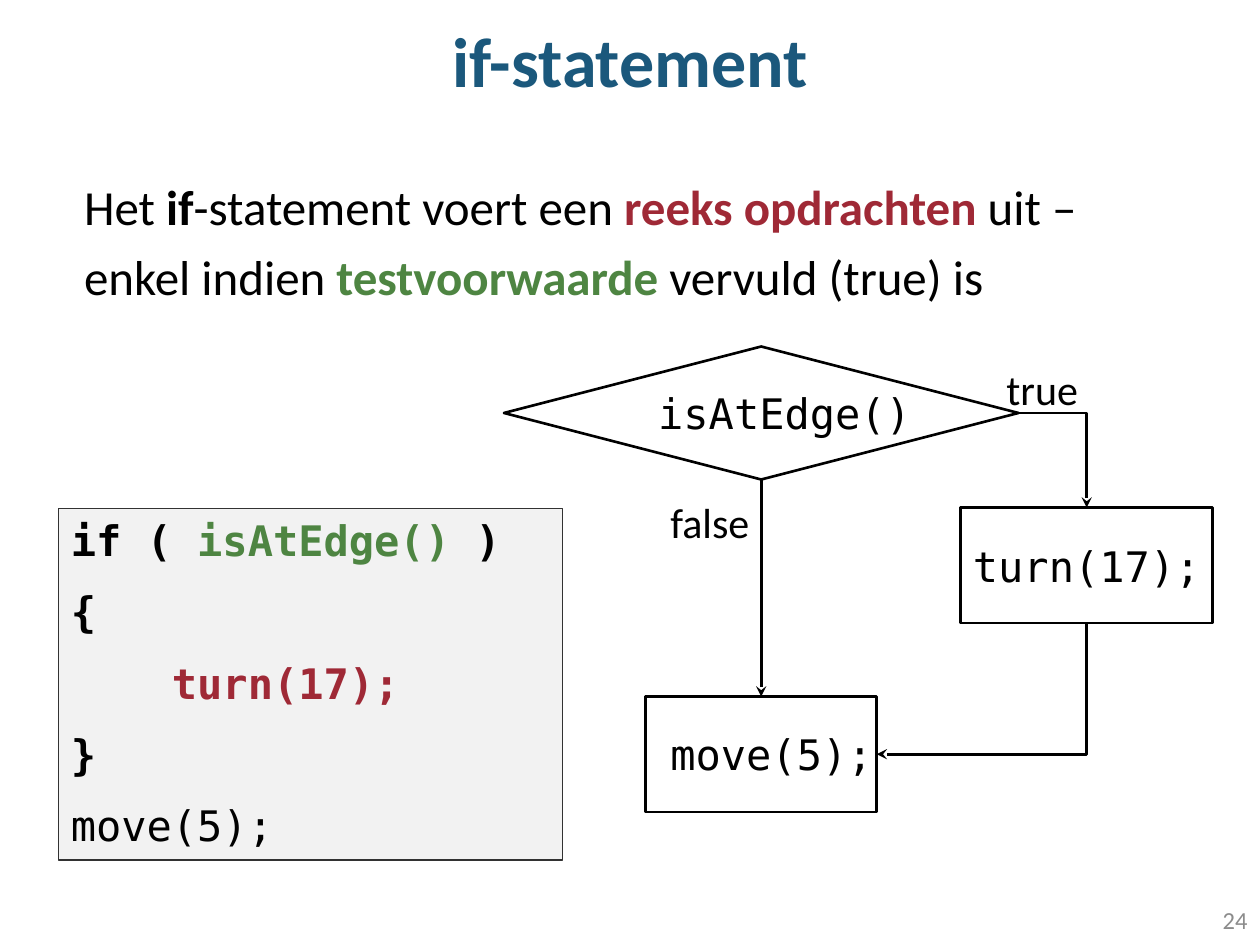
from pptx import Presentation
from pptx.dml.color import RGBColor as RGB
from pptx.enum.shapes import MSO_CONNECTOR as Link, MSO_SHAPE as Kind
from pptx.enum.text import MSO_ANCHOR as Anchor, PP_ALIGN as Align
from pptx.oxml.ns import qn
from pptx.util import Pt
from lxml.etree import SubElement

BLACK = RGB(0x00, 0x00, 0x00)
WHITE = RGB(0xFF, 0xFF, 0xFF)
BLUE = RGB(0x1B, 0x58, 0x7C)
RED = RGB(0x9F, 0x29, 0x36)
GREEN = RGB(0x4E, 0x85, 0x42)
GRAY = RGB(0x8C, 0x8C, 0x8C)
PALE = RGB(0xF2, 0xF2, 0xF2)
DARK = RGB(0x32, 0x32, 0x32)
SANS = "Calibri"
MONO = "DejaVu Sans Mono"


def style(para, face, size, color=BLACK, bold=False, align=Align.LEFT):
    font = para.font
    font.name, font.size, font.bold = face, Pt(size), bold
    font.color.rgb = color
    para.alignment = align


def add_runs(para, parts):
    """Each part is (text, color); a colour of None keeps plain text."""
    for text, color in parts:
        run = para.add_run()
        run.text = text
        if color is not None:
            run.font.bold = True
            run.font.color.rgb = color


def add_text(slide, box, text, face, size, color=BLACK, bold=False,
             align=Align.LEFT, anchor=Anchor.TOP):
    frame = slide.shapes.add_textbox(*map(Pt, box)).text_frame
    frame.word_wrap = True
    frame.vertical_anchor = anchor
    para = frame.paragraphs[0]
    para.text = text
    style(para, face, size, color, bold, align)
    return para


def add_node(slide, kind, box, fill=WHITE, line=BLACK, width=1.5):
    node = slide.shapes.add_shape(kind, *map(Pt, box))
    node.shadow.inherit = False
    node.fill.solid()
    node.fill.fore_color.rgb = fill
    node.line.color.rgb = line
    node.line.width = Pt(width)
    return node


def add_arrow(slide, kind, start, end):
    arrow = slide.shapes.add_connector(kind, *map(Pt, start + end))
    arrow.line.color.rgb = BLACK
    arrow.line.width = Pt(1.5)
    props = arrow._element.spPr
    SubElement(props.find(qn("a:ln")), qn("a:tailEnd"), type="stealth")
    SubElement(props, qn("a:effectLst"))
    return arrow


def add_bend(slide, start, end, down=False):
    """Arrow with one corner: across then down, or down then to the left."""
    (x1, y1), (x2, y2) = start, end
    if down:
        # A quarter turn swaps width and height about the shared centre
        mid_x, mid_y = (x1 + x2) / 2, (y1 + y2) / 2
        half_w, half_h = (y2 - y1) / 2, (x1 - x2) / 2
        start = (mid_x - half_w, mid_y - half_h)
        end = (mid_x + half_w, mid_y + half_h)
    props = add_arrow(slide, Link.ELBOW, start, end)._element.spPr
    props.find(qn("a:prstGeom")).set("prst", "bentConnector2")
    if down:
        props.find(qn("a:xfrm")).set("rot", str(90 * 60000))


def add_title(slide, box):
    para = add_text(slide, box, "if-statement", SANS, 40, BLUE, True,
                    Align.CENTER, Anchor.MIDDLE)
    para.line_spacing = 0.9


def add_intro(slide, box):
    para = add_text(slide, box, "", SANS, 28)
    para.line_spacing = Pt(40)
    para.space_before = Pt(7.5)
    para._p.get_or_add_pPr().set("marL", str(Pt(8.6)))
    add_runs(para, [("Het ", None), ("if", BLACK),
                    ("-statement voert een ", None),
                    ("reeks opdrachten ", RED),
                    ("uit – enkel indien ", None),
                    ("testvoorwaarde", GREEN),
                    (" vervuld (true) is", None)])


def add_code(slide, box):
    frame = add_node(slide, Kind.RECTANGLE, box, PALE, DARK, 0.75).text_frame
    frame.word_wrap = True
    frame.vertical_anchor = Anchor.TOP
    # Lines of code: indent in points, then the coloured parts
    lines = [(0, [("if ( ", BLACK), ("isAtEdge() ", GREEN), (")", BLACK)]),
             (0, [("{", BLACK)]),
             (57.8, [("turn(17);", RED)]),
             (0, [("}", BLACK)]),
             (0, [("move(5);", None)])]
    for i, (indent, parts) in enumerate(lines):
        para = frame.add_paragraph() if i else frame.paragraphs[0]
        style(para, MONO, 24)
        para.space_before = Pt(12)
        para._p.get_or_add_pPr().set("marL", str(Pt(indent)))
        add_runs(para, parts)


def add_flow(slide, box):
    left, top, width, height = box
    mid, right = left + 147, left + 333
    test_y, turn_y, move_y = top + 38, top + 92, top + 200
    node_h = 66

    # Nodes
    test = add_node(slide, Kind.FLOWCHART_DECISION, (left, top, 294, 76))
    move = add_node(slide, Kind.RECTANGLE, (mid - 66, move_y, 132, node_h))
    turn = add_node(slide, Kind.RECTANGLE, (right - 72, turn_y, 144, node_h))
    frame = turn.text_frame
    frame.word_wrap = False
    frame.vertical_anchor = Anchor.MIDDLE
    frame.paragraphs[0].text = "turn(17);"
    style(frame.paragraphs[0], MONO, 24, align=Align.CENTER)

    # Labels
    for x, y, wide, text, face in [(81, 20, 192, "isAtEdge()", MONO),
                                   (88, 215, 132, "move(5);", MONO),
                                   (280, 6, 66, "true", SANS),
                                   (88, 82, 66, "false", SANS)]:
        add_text(slide, (left + x, top + y, wide, 36), text, face, 24)

    # Arrows
    add_bend(slide, (left + 294, test_y), (right, turn_y))
    add_bend(slide, (right, turn_y + node_h),
             (mid + 66, move_y + node_h / 2), down=True)
    fall = add_arrow(slide, Link.STRAIGHT, (mid, top + 76), (mid, move_y))
    fall.begin_connect(test, 2)
    fall.end_connect(move, 0)


def main():
    deck = Presentation()
    deck.slide_width, deck.slide_height = Pt(720), Pt(540)
    slide = deck.slides.add_slide(deck.slide_layouts[6])
    add_title(slide, (0, 0, 720, 74))
    add_intro(slide, (32.4, 90.7, 600, 378))
    add_code(slide, (33.4, 290.4, 288, 201))
    add_flow(slide, (288, 198, 405, 266))
    # Page number
    add_text(slide, (558, 511.2, 162, 28.8), "24", SANS, 14, GRAY,
             align=Align.RIGHT, anchor=Anchor.MIDDLE)
    deck.save("out.pptx")


if __name__ == "__main__":
    main()
